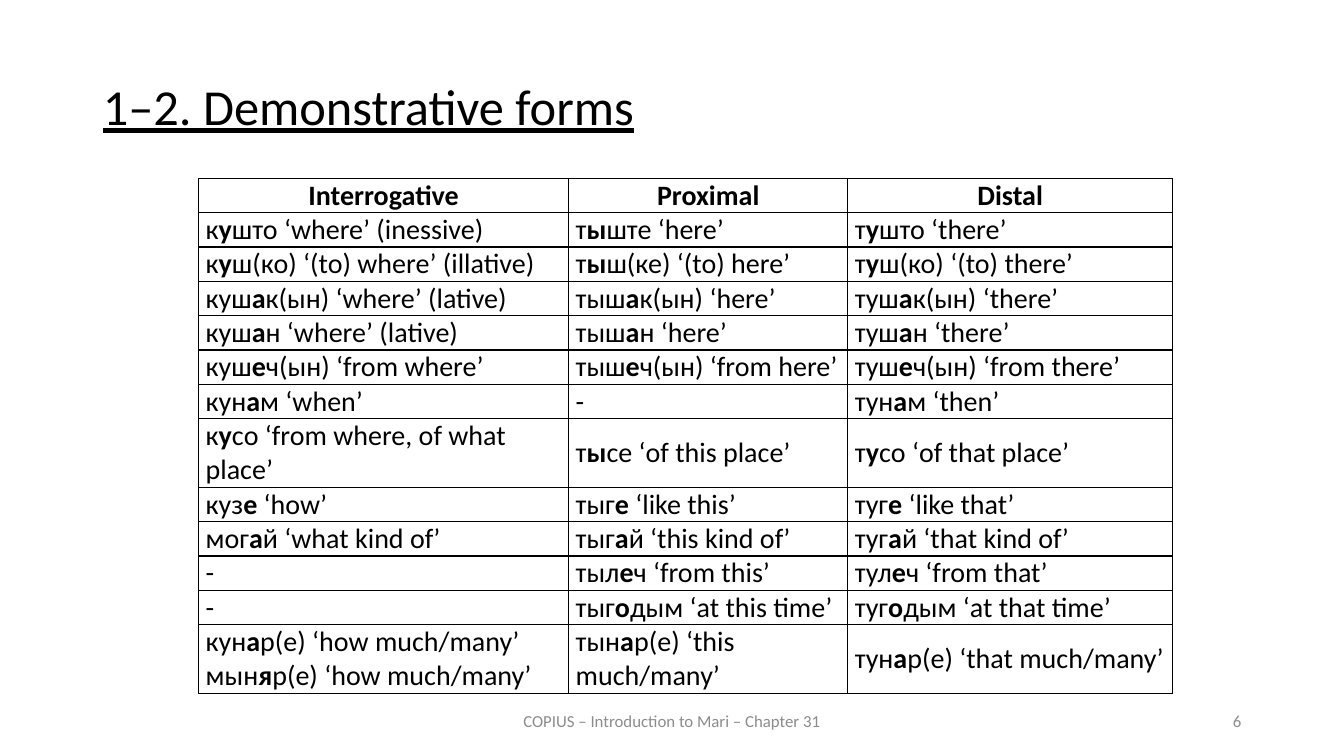
from lxml import etree
from pptx import Presentation
from pptx import util as u
from pptx.dml.color import RGBColor
from pptx.enum import text
from pptx.oxml import ns

COLORS = {"ink": "000000", "muted": "8C8C8C"}
FONT = "Calibri"
WIDTH, HEIGHT = 13.33, 7.5
MARGIN = 0.92
COLUMNS = (3.67, 2.77, 3.22)
LINE_HEIGHT = 0.34

HEADERS = ("Interrogative", "Proximal", "Distal")
# Asterisks enclose the stressed vowel
FORMS = (
    ("к*у*што ‘where’ (inessive)", "т*ы*ште ‘here’", "т*у*што ‘there’"),
    ("к*у*ш(ко) ‘(to) where’ (illative)", "т*ы*ш(ке) ‘(to) here’", "т*у*ш(ко) ‘(to) there’"),
    ("куш*а*к(ын) ‘where’ (lative)", "тыш*а*к(ын) ‘here’", "туш*а*к(ын) ‘there’"),
    ("куш*а*н ‘where’ (lative)", "тыш*а*н ‘here’", "туш*а*н ‘there’"),
    ("куш*е*ч(ын) ‘from where’", "тыш*е*ч(ын) ‘from here’", "туш*е*ч(ын) ‘from there’"),
    ("кун*а*м ‘when’", "-", "тун*а*м ‘then’"),
    ("к*у*со ‘from where, of what place’", "т*ы*се ‘of this place’", "т*у*со ‘of that place’"),
    ("куз*е* ‘how’", "тыг*е* ‘like this’", "туг*е* ‘like that’"),
    ("мог*а*й ‘what kind of’", "тыг*а*й ‘this kind of’", "туг*а*й ‘that kind of’"),
    ("-", "тыл*е*ч ‘from this’", "тул*е*ч ‘from that’"),
    ("-", "тыг*о*дым ‘at this time’", "туг*о*дым ‘at that time’"),
    ("кун*а*р(е) ‘how much/many’\nмын*я*р(е) ‘how much/many’",
     "тын*а*р(е) ‘this much/many’", "тун*а*р(е) ‘that much/many’"),
)
TALL_ROWS = (7, 12)


def style(para, size, color, align):
    para.font.name = FONT
    para.font.size = u.Pt(size)
    para.font.color.rgb = RGBColor.from_string(COLORS[color])
    para.alignment = align


def add_heading(page, box, words):
    title = page.shapes.title
    title.left, title.top, title.width, title.height = map(u.Inches, box)
    frame = title.text_frame
    frame.text = words
    frame.auto_size = text.MSO_AUTO_SIZE.NONE
    frame.vertical_anchor = text.MSO_ANCHOR.TOP
    para = frame.paragraphs[0]
    style(para, 36, "ink", text.PP_ALIGN.JUSTIFY)
    para.font.underline = True
    para.line_spacing = 0.9
    para.space_before = u.Pt(12)


def add_border(cell):
    properties = cell._tc.get_or_add_tcPr()
    for side in ("a:lnL", "a:lnR", "a:lnT", "a:lnB"):
        line = etree.SubElement(properties, ns.qn(side), w=str(u.Pt(1)))
        fill = etree.SubElement(line, ns.qn("a:solidFill"))
        etree.SubElement(fill, ns.qn("a:srgbClr"), val=COLORS["ink"])


def fill_cell(cell, words, header):
    add_border(cell)
    cell.fill.background()
    cell.margin_left = cell.margin_right = u.Inches(0.07)
    cell.margin_top = cell.margin_bottom = 0
    cell.vertical_anchor = text.MSO_ANCHOR.TOP if header else text.MSO_ANCHOR.MIDDLE
    frame = cell.text_frame
    for index, line in enumerate(words.split("\n")):
        para = frame.add_paragraph() if index else frame.paragraphs[0]
        style(para, 20, "ink", text.PP_ALIGN.CENTER if header else text.PP_ALIGN.LEFT)
        for part, piece in enumerate(line.split("*")):
            span = para.add_run()
            span.text = piece
            span.font.bold = header or part % 2 == 1


def add_forms_table(page, left, top):
    rows = (HEADERS,) + FORMS
    lines = [2 if row in TALL_ROWS else 1 for row in range(len(rows))]
    table = page.shapes.add_table(
        len(rows), len(COLUMNS), u.Inches(left), u.Inches(top),
        u.Inches(sum(COLUMNS)), u.Inches(sum(lines) * LINE_HEIGHT)).table
    table.first_row = table.horz_banding = False
    for column, width in zip(table.columns, COLUMNS):
        column.width = u.Inches(width)
    for row, (entries, count) in enumerate(zip(rows, lines)):
        table.rows[row].height = u.Inches(count * LINE_HEIGHT)
        for column, words in enumerate(entries):
            fill_cell(table.cell(row, column), words, row == 0)


def add_footer(page, box, words, align):
    frame = page.shapes.add_textbox(*map(u.Inches, box)).text_frame
    frame.word_wrap = True
    frame.vertical_anchor = text.MSO_ANCHOR.MIDDLE
    frame.text = words
    style(frame.paragraphs[0], 12, "muted", align)


def main():
    deck = Presentation()
    deck.slide_width, deck.slide_height = u.Inches(WIDTH), u.Inches(HEIGHT)
    page = deck.slides.add_slide(deck.slide_layouts.get_by_name("Title Only"))

    # Heading and table
    add_heading(page, (MARGIN, 0.76, 11.5, 0.83), "1–2. Demonstrative forms")
    add_forms_table(page, 1.97, 1.77)

    # Footer and page number
    add_footer(page, ((WIDTH - 4.5) / 2, 6.95, 4.5, 0.4),
               "COPIUS – Introduction to Mari – Chapter 31", text.PP_ALIGN.CENTER)
    add_footer(page, (WIDTH - MARGIN - 3, 6.95, 3, 0.4), "6", text.PP_ALIGN.RIGHT)

    deck.save("out.pptx")


if __name__ == "__main__":
    main()
